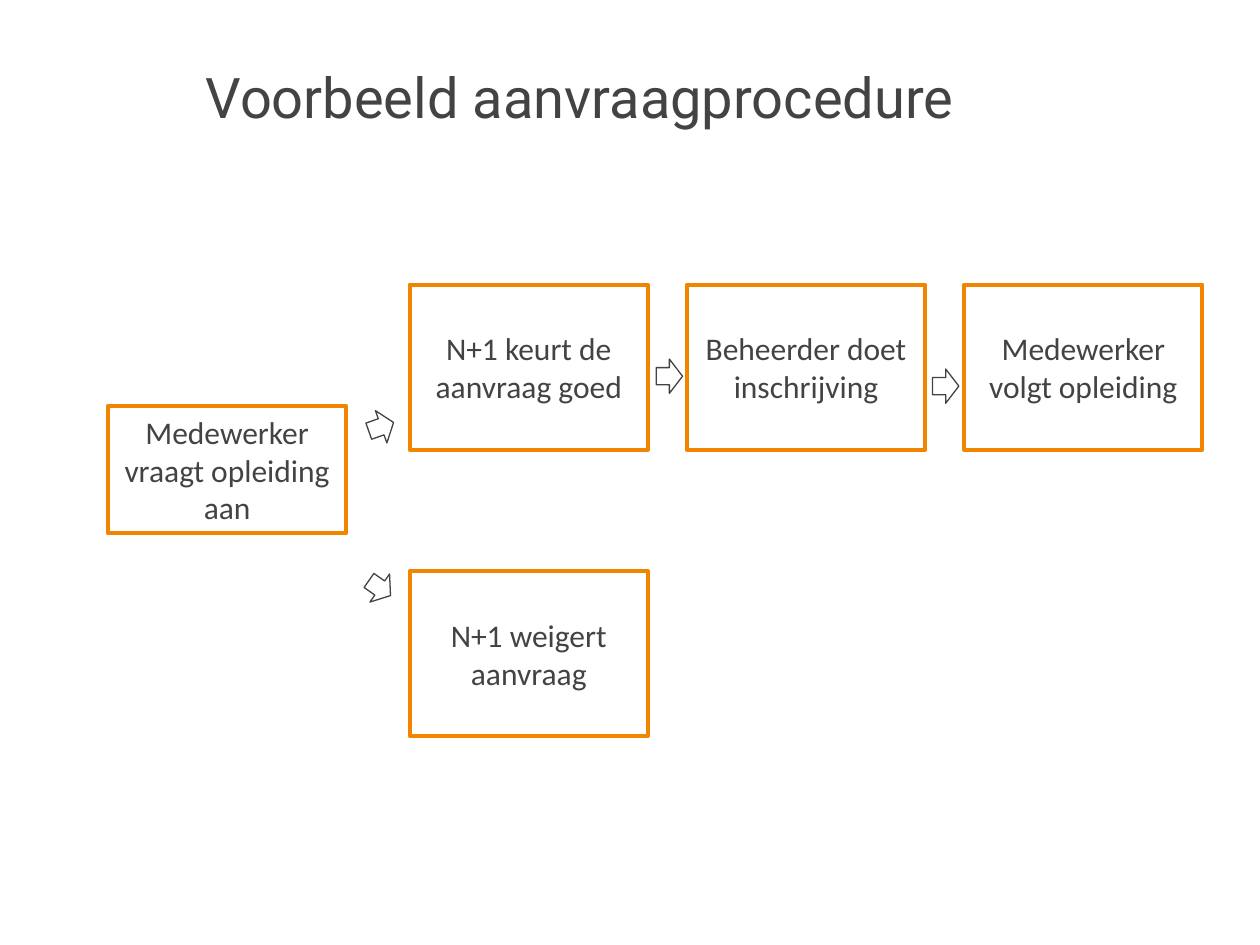
from pptx import Presentation
from pptx.dml.color import RGBColor
from pptx.enum.shapes import MSO_SHAPE as Shape
from pptx.enum.text import MSO_ANCHOR as Anchor, PP_ALIGN as Align
from pptx.util import Cm, Pt

COLORS = {"text": "424342", "border": "F18500", "arrow": "FFFFFF"}


class FlowSlide:
    """Holds the style and the slide being drawn."""

    title_font, body_font = "Roboto", "Calibri"
    step_width, step_height = 4.8, 3.33
    arrow_width, arrow_height = 0.53, 0.69

    def __init__(self, deck):
        self.slide = deck.slides.add_slide(deck.slide_layouts[5])

    @staticmethod
    def color(name):
        return RGBColor.from_string(COLORS[name])

    def add_text(self, frame, text, font, size, align):
        frame.word_wrap = True
        frame.vertical_anchor = Anchor.MIDDLE
        paragraph = frame.paragraphs[0]
        paragraph.alignment = align
        run = paragraph.add_run()
        run.text = text
        run.font.name = font
        run.font.size = Pt(size)
        run.font.color.rgb = self.color("text")

    def title(self, text, left, top, width, height):
        heading = self.slide.shapes.title
        heading.left, heading.top = Cm(left), Cm(top)
        heading.width, heading.height = Cm(width), Cm(height)
        self.add_text(heading.text_frame, text, self.title_font, 32, Align.LEFT)

    def outlined(self, kind, left, top, width, height, line, weight):
        shape = self.slide.shapes.add_shape(
            kind, Cm(left), Cm(top), Cm(width), Cm(height))
        shape.shadow.inherit = False
        shape.line.color.rgb = self.color(line)
        shape.line.width = Pt(weight)
        return shape

    def step(self, text, left, top, height=step_height):
        box = self.outlined(Shape.RECTANGLE, left, top,
                            self.step_width, height, "border", 2.25)
        box.fill.background()
        self.add_text(box.text_frame, text, self.body_font, 18, Align.CENTER)

    def arrow(self, left, top, rotation=0):
        arrow = self.outlined(Shape.RIGHT_ARROW, left, top,
                              self.arrow_width, self.arrow_height, "text", 0.75)
        arrow.fill.solid()
        arrow.fill.fore_color.rgb = self.color("arrow")
        arrow.rotation = rotation


def main():
    deck = Presentation()
    deck.slide_width, deck.slide_height = Cm(25.4), Cm(19.05)
    flow = FlowSlide(deck)
    flow.title("Voorbeeld aanvraagprocedure", 3.89, 1.02, 20.62, 1.85)

    # Request, then the approved route along the top row
    flow.step("Medewerker vraagt opleiding aan", 2.18, 8.18, height=2.57)
    approved_left, approved_top, pitch = 8.26, 5.74, 5.59
    approved_steps = ["N+1 keurt de aanvraag goed",
                      "Beheerder doet inschrijving",
                      "Medewerker volgt opleiding"]
    for column, text in enumerate(approved_steps):
        flow.step(text, approved_left + column * pitch, approved_top)

    # Refused route
    flow.step("N+1 weigert aanvraag", approved_left, 11.51)

    # Arrows: to approval, to refusal, then between the approved steps
    flow.arrow(7.42, 8.26, rotation=340.5)
    flow.arrow(7.39, 11.51, rotation=35)
    flow.arrow(13.23, 7.24)
    flow.arrow(18.8, 7.44)

    deck.save("out.pptx")


if __name__ == "__main__":
    main()
